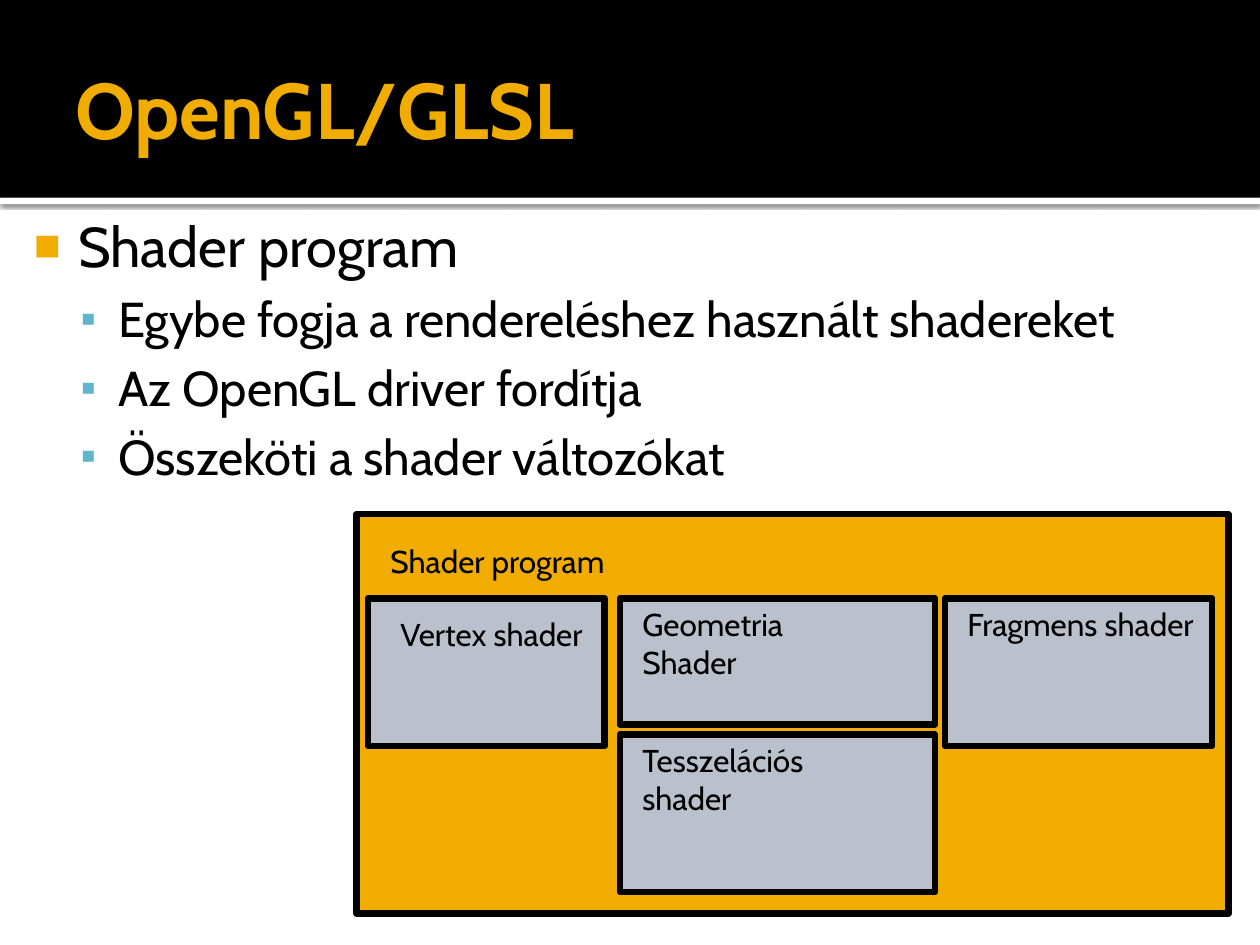
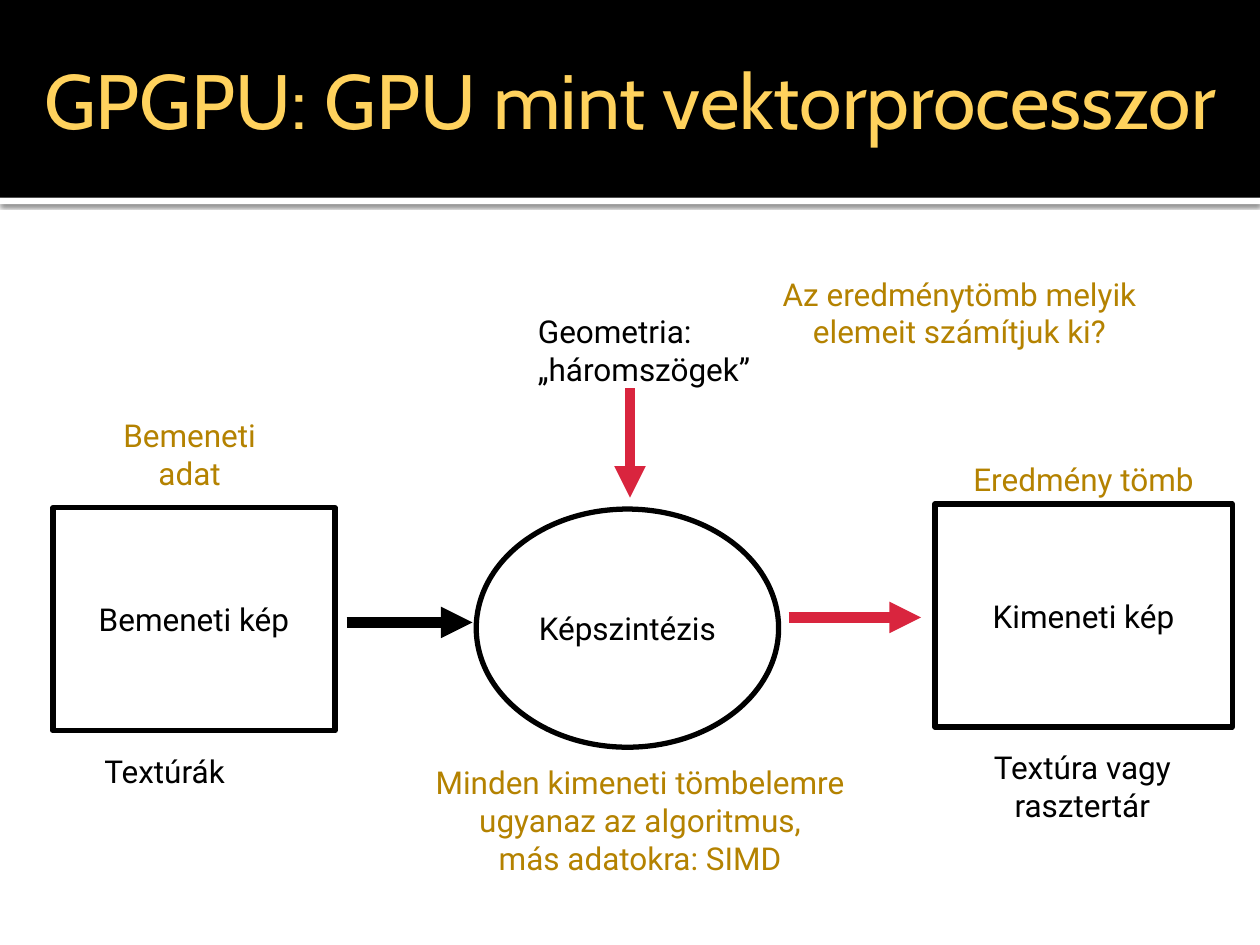
from lxml import etree
from pptx import Presentation
from pptx.dml.color import RGBColor
from pptx.enum import shapes, text
from pptx.oxml import ns
from pptx.util import Inches, Pt

BLACK = RGBColor(0x00, 0x00, 0x00)
WHITE = RGBColor(0xFF, 0xFF, 0xFF)
AMBER = RGBColor(0xF0, 0xAD, 0x00)
PALE_AMBER = RGBColor(0xFF, 0xD2, 0x5D)
DARK_AMBER = RGBColor(0xB4, 0x82, 0x00)
BLUE = RGBColor(0x60, 0xB5, 0xCC)
GREY = RGBColor(0xBA, 0xC0, 0xCC)
RED = RGBColor(0xD9, 0x25, 0x3E)

HEADING_FONT, DIAGRAM_FONT = "Cabin", "Roboto"
LABEL_SIZE = 18
BAND_HEIGHT = 1.57
RECTANGLE = shapes.MSO_SHAPE.RECTANGLE
OVAL = shapes.MSO_SHAPE.OVAL
LEFT, CENTER = text.PP_ALIGN.LEFT, text.PP_ALIGN.CENTER

# Slide 1: (level, text), then places as left, top, width, height
PROGRAM_POINTS = [
    (0, "Shader program"),
    (1, "Egybe fogja a rendereléshez használt shadereket"),
    (1, "Az OpenGL driver fordítja"),
    (1, "Összeköti a shader változókat"),
]
# level: (size, space before, indent, hanging, bullet, colour, bullet percent)
LEVELS = {
    0: (32, 0, 0.48, 0.35, "■", AMBER, 80),
    1: (28, 5.6, 0.8, 0.3, "▪", BLUE, 90),
}
PROGRAM_BOX = (2.83, 4.08, 6.92, 3.17)
SHADER_BOXES = [
    (7.5, 4.75, 2.12, 1.17),
    (4.92, 5.83, 2.5, 1.25),
    (4.92, 4.75, 2.5, 1),
    (2.92, 4.75, 1.88, 1.17),
]
SHADER_LABELS = [
    ("Shader program", (3, 4.25, 1.92, 0.4)),
    ("Vertex shader", (3.08, 4.83, 1.75, 0.4)),
    ("Geometria Shader", (5, 4.75, 2.08, 0.42)),
    ("Tesszelációs shader", (5, 5.83, 2.17, 0.42)),
    ("Fragmens shader", (7.58, 4.75, 2.04, 0.4)),
]

# Slide 2
STAGES = [
    (RECTANGLE, "Bemeneti kép", (0.42, 4.03, 2.24, 1.77)),
    (RECTANGLE, "Kimeneti kép", (7.42, 4, 2.36, 1.77)),
    (OVAL, "Képszintézis", (3.78, 4.04, 2.4, 1.89)),
]
ARROWS = [  # start, end, colour
    ((5, 3.08), (5, 3.95), RED),
    ((6.26, 4.9), (7.31, 4.9), RED),
    ((2.75, 4.94), (3.75, 4.94), BLACK),
]
STAGE_LABELS = [
    ("Textúrák", (0.73, 5.92, 1.49, 0.5), BLACK, LEFT),
    ("Textúra vagy\nrasztertár", (7.53, 5.89, 2.12, 0.9), BLACK, CENTER),
    ("Geometria:\n„háromszögek”", (4.17, 2.43, 2.41, 0.9), BLACK, LEFT),
    ("Bemeneti\nadat", (0.84, 3.25, 1.33, 0.71), DARK_AMBER, CENTER),
    ("Eredmény tömb", (7.28, 3.6, 2.64, 0.4), DARK_AMBER, CENTER),
    ("Az eredménytömb melyik\nelemeit számítjuk ki?",
     (6.07, 2.13, 3.09, 0.71), DARK_AMBER, CENTER),
    ("Minden kimeneti tömbelemre\nugyanaz az algoritmus,\nmás adatokra: SIMD",
     (3.32, 6.01, 3.52, 1.01), DARK_AMBER, CENTER),
]


def inches(values):
    return [Inches(value) for value in values]


def add_xml(parent, tag, **attributes):
    return etree.SubElement(parent, ns.qn(tag), attributes)


def format_text(frame, font, size, color, align=LEFT, bold=False):
    for paragraph in frame.paragraphs:
        paragraph.alignment = align
        for run in paragraph.runs:
            run.font.name = font
            run.font.size = Pt(size)
            run.font.bold = bold
            run.font.color.rgb = color


def add_box(slide, kind, place, fill=None, line_width=0):
    shape = slide.shapes.add_shape(kind, *inches(place))
    shape.shadow.inherit = False
    if fill is None:
        shape.fill.background()
    else:
        shape.fill.solid()
        shape.fill.fore_color.rgb = fill
    if line_width:
        shape.line.color.rgb = BLACK
        shape.line.width = Pt(line_width)
    else:
        shape.line.fill.background()
    return shape


def add_label(slide, words, place, font, color=BLACK, align=LEFT):
    frame = slide.shapes.add_textbox(*inches(place)).text_frame
    frame.word_wrap = True
    frame.text = words
    format_text(frame, font, LABEL_SIZE, color, align)


def add_arrow(slide, start, end, color):
    arrow = slide.shapes.add_connector(
        shapes.MSO_CONNECTOR.STRAIGHT, *inches(start + end))
    arrow.line.color.rgb = color
    arrow.line.width = Pt(6)
    add_xml(arrow.line._get_or_add_ln(), "a:tailEnd", type="triangle")
    add_xml(arrow.element.spPr, "a:effectLst")


def place_placeholder(shape, place, insets, anchor):
    shape.left, shape.top, shape.width, shape.height = inches(place)
    frame = shape.text_frame
    frame.margin_left, frame.margin_top, frame.margin_right, frame.margin_bottom = (
        inches(insets))
    frame.vertical_anchor = anchor
    frame.word_wrap = True
    frame.auto_size = text.MSO_AUTO_SIZE.NONE
    return frame


def set_title(slide, words, place, size, color, bold=False):
    frame = place_placeholder(slide.shapes.title, place, (0.1, 0.05, 0.05, 0.05),
                              text.MSO_ANCHOR.MIDDLE)
    frame.text = words
    format_text(frame, HEADING_FONT, size, color, bold=bold)


def add_master_bands(presentation, slide):
    """Draw the header bands on a slide, then move them behind everything on the master."""
    rule = add_box(slide, RECTANGLE, (0, BAND_HEIGHT, 10, 0.05), WHITE)
    band = add_box(slide, RECTANGLE, (0, 0, 10, BAND_HEIGHT), BLACK)
    effects = rule.element.spPr.find(ns.qn("a:effectLst"))
    shadow = add_xml(effects, "a:outerShdw", blurRad=str(Pt(2.5)), dist=str(Pt(0.8)),
                     dir="5400000", algn="tl", rotWithShape="0")
    add_xml(add_xml(shadow, "a:srgbClr", val=str(BLACK)), "a:alpha", val="60000")
    tree = presentation.slide_master.shapes.element
    for position, shape in enumerate((rule, band), start=2):
        tree.insert(position, shape.element)


def fill_points(frame, points):
    frame.text = "\n".join(words for _, words in points)
    format_text(frame, HEADING_FONT, LABEL_SIZE, BLACK)
    for paragraph, (level, _) in zip(frame.paragraphs, points):
        size, before, indent, hanging, bullet, color, percent = LEVELS[level]
        paragraph.level = level
        paragraph.space_before = Pt(before)
        paragraph.runs[0].font.size = Pt(size)
        properties = paragraph._p.get_or_add_pPr()
        properties.set("marL", str(Inches(indent)))
        properties.set("indent", str(-Inches(hanging)))
        add_xml(add_xml(properties, "a:buClr"), "a:srgbClr", val=str(color))
        add_xml(properties, "a:buSzPct", val=str(percent * 1000))
        add_xml(properties, "a:buFont", typeface="Arial")
        add_xml(properties, "a:buChar", char=bullet)


def build_shader_program(slide):
    set_title(slide, "OpenGL/GLSL", (0.5, 0.17, 9, 1.37), 45, AMBER, bold=True)
    body = place_placeholder(slide.placeholders[1], (0.08, 1.58, 9, 5.06),
                             (0.06, 0.1, 0.1, 0.05), text.MSO_ANCHOR.TOP)
    fill_points(body, PROGRAM_POINTS)
    add_box(slide, RECTANGLE, PROGRAM_BOX, AMBER, 3.78)
    for place in SHADER_BOXES:
        add_box(slide, RECTANGLE, place, GREY, 3.78)
    for words, place in SHADER_LABELS:
        add_label(slide, words, place, HEADING_FONT)


def build_vector_processor(slide):
    set_title(slide, "GPGPU: GPU mint vektorprocesszor",
              (0.25, 0, 10, BAND_HEIGHT), 44, PALE_AMBER)
    for kind, words, place in STAGES:
        frame = add_box(slide, kind, place, line_width=3).text_frame
        frame.word_wrap = False
        frame.vertical_anchor = text.MSO_ANCHOR.MIDDLE
        frame.text = words
        format_text(frame, DIAGRAM_FONT, LABEL_SIZE, BLACK, CENTER)
    for arrow in ARROWS:
        add_arrow(slide, *arrow)
    for words, place, color, align in STAGE_LABELS:
        add_label(slide, words, place, DIAGRAM_FONT, color, align)


def main():
    presentation = Presentation()
    presentation.slide_width, presentation.slide_height = Inches(10), Inches(7.5)
    content_layout = presentation.slide_layouts.get_by_name("Title and Content")
    title_layout = presentation.slide_layouts.get_by_name("Title Only")
    program_slide = presentation.slides.add_slide(content_layout)
    add_master_bands(presentation, program_slide)
    build_shader_program(program_slide)
    build_vector_processor(presentation.slides.add_slide(title_layout))
    presentation.save("out.pptx")


if __name__ == "__main__":
    main()
